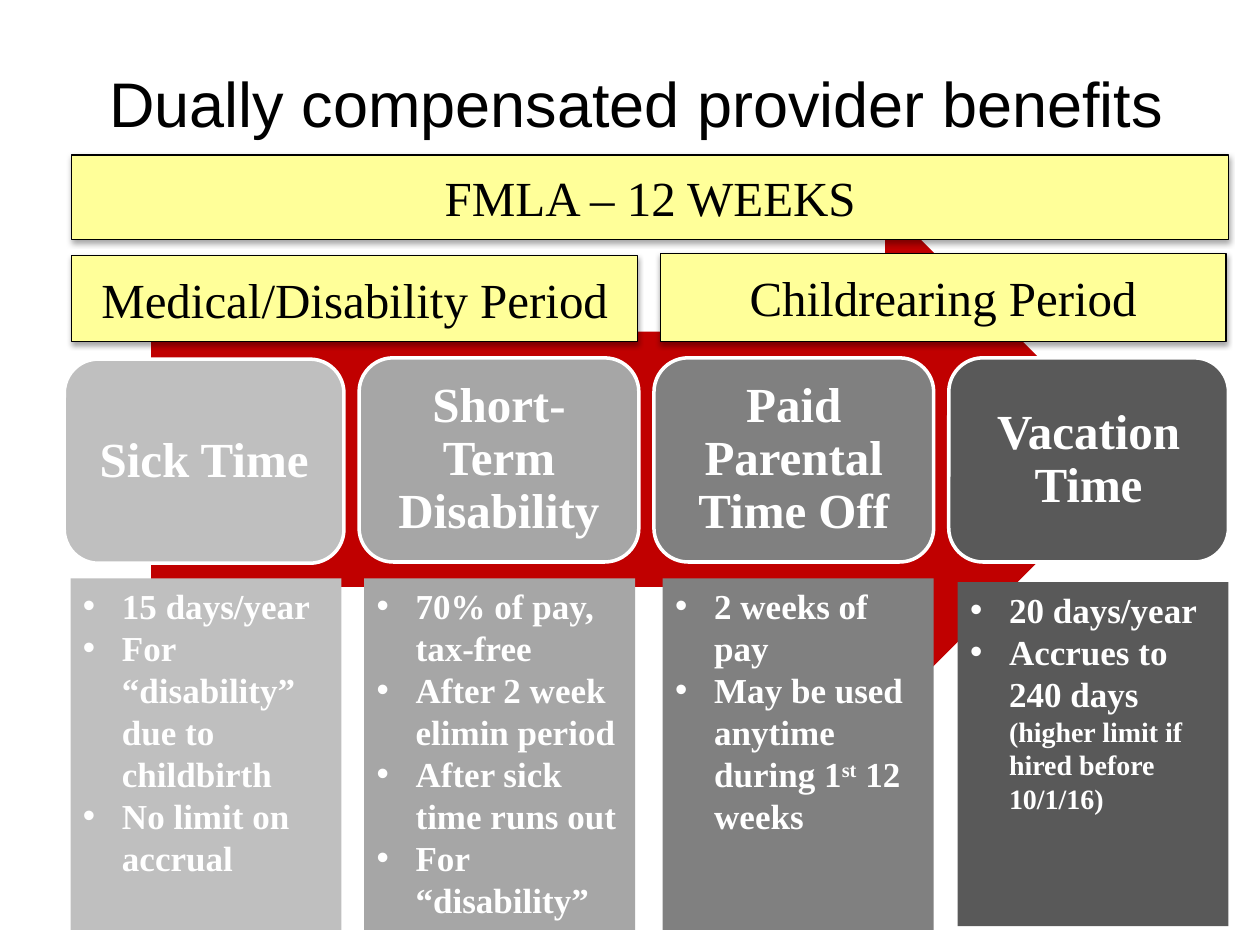
"""Build the slide on dually compensated provider benefits."""
from lxml.etree import SubElement
from pptx import Presentation
from pptx.dml.color import RGBColor
from pptx.enum.shapes import MSO_SHAPE
from pptx.enum.text import MSO_ANCHOR, PP_ALIGN
from pptx.oxml.ns import qn
from pptx.util import Inches, Pt

COLORS = {
    "white": "FFFFFF", "black": "000000", "arrow": "C00000", "period": "FFFF99",
    "sick": "BFBFBF", "disability": "A6A6A6", "parental": "808080", "vacation": "595959",
}
SERIF = "Times New Roman"
TITLE = "Dually compensated provider benefits"
PERIODS = [
    ("Medical/Disability Period", 0.57, 2.03, 4.49, 0.68),
    ("Childrearing Period", 5.24, 2.01, 4.49, 0.7),
    ("FMLA – 12 WEEKS", 0.57, 1.23, 9.18, 0.67),
]
BENEFITS = [
    {"name": "Sick Time", "color": "sick", "top": 2.85, "panel": (0.56, 4.59, 2.15, 2.79),
     "points": [["15 days/year"], ["For “disability” due to childbirth"],
                ["No limit on accrual"]]},
    {"name": "Short-Term Disability", "color": "disability", "top": 2.84,
     "panel": (2.89, 4.59, 2.15, 2.79),
     "points": [["70% of pay, tax-free"], ["After 2 week elimin period"],
                ["After sick time runs out"], ["For “disability”"]]},
    {"name": "Paid Parental Time Off", "color": "parental", "top": 2.84,
     "panel": (5.26, 4.59, 2.15, 2.79),
     "points": [["2 weeks of pay"],
                ["May be used anytime during 1", ("st", "super"), " 12 weeks"]]},
    {"name": "Vacation Time", "color": "vacation", "top": 2.84,
     "panel": (7.6, 4.62, 2.15, 2.73),
     "points": [["20 days/year"],
                ["Accrues to 240 days ", ("(higher limit if hired before 10/1/16)", "small")]]},
]
CARD_LEFT, CARD_STEP, CARD_W, CARD_H = 0.51, 2.34, 2.22, 1.62


def rgb(name):
    return RGBColor.from_string(COLORS[name])


def add_box(s, kind, box, fill, line=None, line_width=1):
    sp = s.shapes.add_shape(kind, *map(Inches, box))
    sp.shadow.inherit = False
    sp.fill.solid()
    sp.fill.fore_color.rgb = rgb(fill)
    if line:
        sp.line.color.rgb = rgb(line)
        sp.line.width = Pt(line_width)
    else:
        sp.line.fill.background()
    sp.text_frame.word_wrap = True
    return sp


def style_run(r, size, color, font=SERIF, bold=False):
    r.font.name = font
    r.font.size = Pt(size)
    r.font.bold = bold
    r.font.color.rgb = rgb(color)


def set_label(sp, text, size, color, font=SERIF, bold=False):
    tf = sp.text_frame
    tf.word_wrap = True
    tf.vertical_anchor = MSO_ANCHOR.MIDDLE
    tf.text = text
    p = tf.paragraphs[0]
    p.alignment = PP_ALIGN.CENTER
    style_run(p.runs[0], size, color, font, bold)
    return p


def add_shadow(sp):
    effects = sp._element.spPr.find(qn("a:effectLst"))
    shadow = SubElement(effects, qn("a:outerShdw"), blurRad=str(Pt(3.1)),
                        dist=str(Pt(1.8)), dir="5400000", rotWithShape="0")
    color = SubElement(shadow, qn("a:srgbClr"), val=COLORS["black"])
    SubElement(color, qn("a:alpha"), val="35000")


def add_bullet(p):
    pPr = p._p.get_or_add_pPr()
    pPr.set("marL", str(Inches(0.31)))
    pPr.set("indent", str(Inches(-0.31)))
    SubElement(pPr, qn("a:buFont"), typeface="Arial")
    SubElement(pPr, qn("a:buChar"), char="•")


def add_card(s, benefit, left):
    box = (left, benefit["top"], CARD_W, CARD_H)
    sp = add_box(s, MSO_SHAPE.ROUNDED_RECTANGLE, box, benefit["color"], "white", 2)
    tf = sp.text_frame
    tf.margin_left = tf.margin_right = tf.margin_top = tf.margin_bottom = Inches(0.12)
    set_label(sp, benefit["name"], 28, "white", bold=True).line_spacing = 0.9


def add_panel(s, benefit):
    tf = add_box(s, MSO_SHAPE.RECTANGLE, benefit["panel"], benefit["color"]).text_frame
    tf.vertical_anchor = MSO_ANCHOR.TOP
    for i, parts in enumerate(benefit["points"]):
        p = tf.add_paragraph() if i else tf.paragraphs[0]
        p.alignment = PP_ALIGN.LEFT
        add_bullet(p)
        for part in parts:
            text, style = (part, None) if isinstance(part, str) else part
            r = p.add_run()
            r.text = text
            style_run(r, 16 if style == "small" else 20, "white", bold=True)
            if style == "super":
                r.font._element.set("baseline", "30000")


def main():
    prs = Presentation()
    prs.slide_width, prs.slide_height = Inches(10), Inches(7.5)
    s = prs.slides.add_slide(prs.slide_layouts[6])
    title = s.shapes.add_textbox(*map(Inches, (0.55, 0.34, 9, 0.94)))
    set_label(title, TITLE, 36, "black", "Arial")
    add_box(s, MSO_SHAPE.RIGHT_ARROW, (1.2, 1.62, 7.85, 4.05), "arrow")
    for i, benefit in enumerate(BENEFITS):
        add_card(s, benefit, CARD_LEFT + i * CARD_STEP)
    for benefit in BENEFITS:
        add_panel(s, benefit)
    for text, *box in PERIODS:
        sp = add_box(s, MSO_SHAPE.RECTANGLE, box, "period", "black", 0.75)
        add_shadow(sp)
        set_label(sp, text, 28, "black")
    prs.save("out.pptx")


if __name__ == "__main__":
    main()
